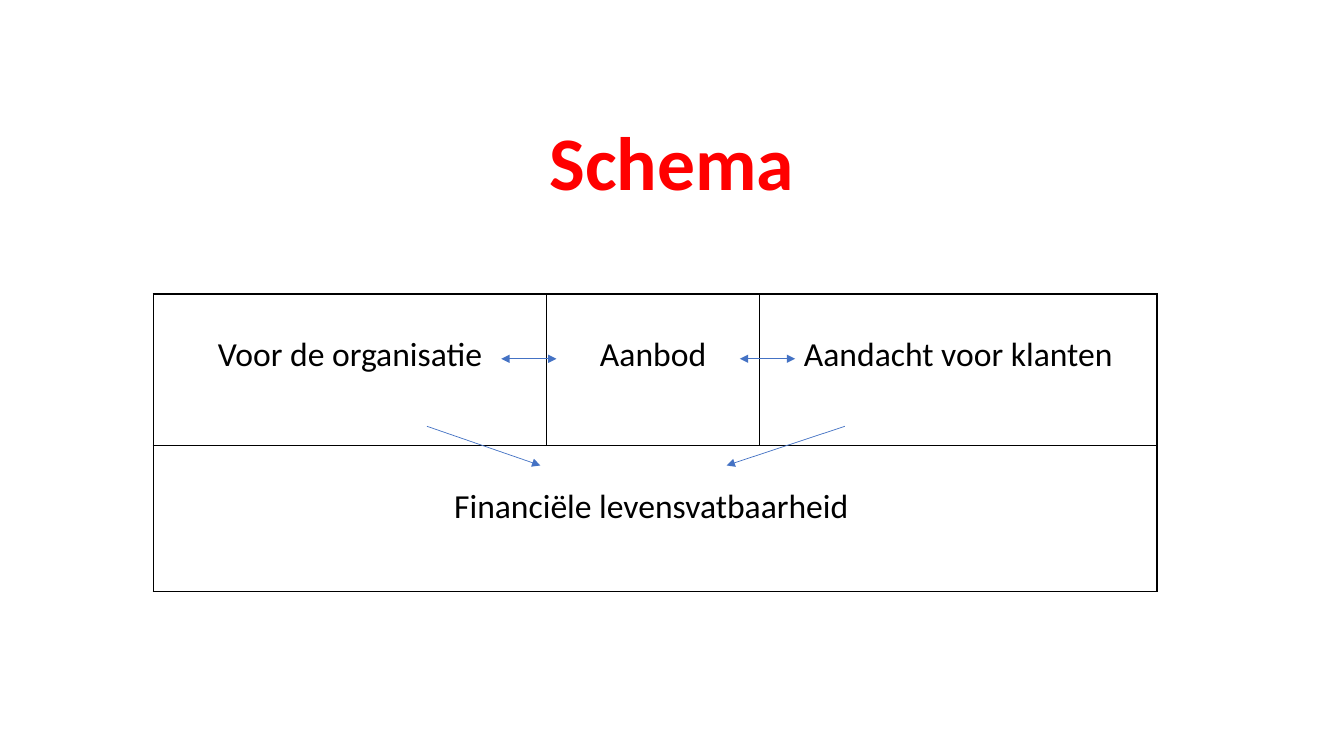
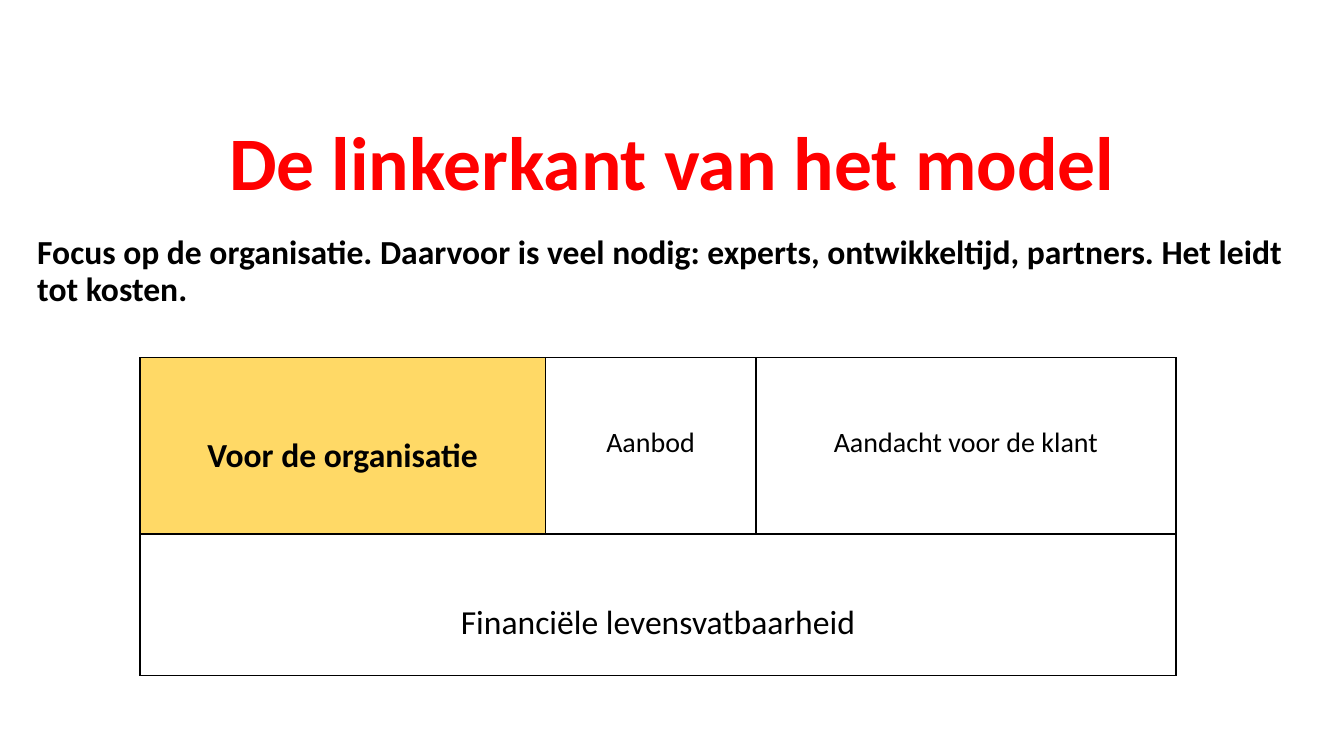
import dataclasses

import lxml.etree
import pptx
import pptx.dml.color
import pptx.enum.shapes
import pptx.enum.text
import pptx.oxml.ns
import pptx.util

Pt = pptx.util.Pt
qn = pptx.oxml.ns.qn
RGB = pptx.dml.color.RGBColor.from_string
ALIGN = pptx.enum.text.PP_ALIGN
ANCHOR = pptx.enum.text.MSO_ANCHOR


@dataclasses.dataclass(frozen=True)
class Theme:
    font: str = "Calibri"
    title_color: str = "FF0000"
    ink: str = "000000"
    highlight: str = "FFD966"
    arrow: str = "4472C4"
    title_size: float = 54
    text_size: float = 24
    small_size: float = 20
    border_width: float = 1
    arrow_width: float = 0.5
    line_spacing: float = 0.9


@dataclasses.dataclass(frozen=True)
class Box:
    left: float
    top: float
    width: float
    height: float

    def lengths(self):
        return [Pt(value) for value in dataclasses.astuple(self)]


@dataclasses.dataclass(frozen=True)
class Part:
    label: str
    inset_top: float
    size: float
    bold: bool = False
    fill: str = ""
    inset_right: float = 5


THEME = Theme()
SLIDE_WIDTH, SLIDE_HEIGHT = 960, 540
TITLE_BOX = Box(120, 88.5, 720, 62.5)


def apply(target, values):
    for name, value in values.items():
        setattr(target, name, value)


def write(frame, text, size, color, bold, align):
    paragraph = frame.paragraphs[0]
    paragraph.text = text
    paragraph.alignment = align
    apply(paragraph.font, {"name": THEME.font, "size": Pt(size), "bold": bold})
    paragraph.font.color.rgb = RGB(color)
    return paragraph


def add_text(slide, box, text, size, color, align, anchor):
    frame = slide.shapes.add_textbox(*box.lengths()).text_frame
    apply(frame, {"word_wrap": True, "vertical_anchor": anchor})
    paragraph = write(frame, text, size, color, True, align)
    paragraph.line_spacing = THEME.line_spacing


def add_title(slide, text):
    add_text(slide, TITLE_BOX, text, THEME.title_size, THEME.title_color,
             ALIGN.CENTER, ANCHOR.BOTTOM)


def add_borders(cell):
    properties = cell._tc.get_or_add_tcPr()
    for side in ("a:lnL", "a:lnR", "a:lnT", "a:lnB"):
        border = lxml.etree.SubElement(properties, qn(side), w=str(Pt(THEME.border_width)))
        fill = lxml.etree.SubElement(border, qn("a:solidFill"))
        lxml.etree.SubElement(fill, qn("a:srgbClr"), val=THEME.ink)


def fill_cell(cell, part):
    apply(cell, {
        "margin_left": Pt(5),
        "margin_right": Pt(part.inset_right),
        "margin_top": Pt(part.inset_top),
        "margin_bottom": 0,
        "vertical_anchor": ANCHOR.TOP,
    })
    write(cell.text_frame, part.label, part.size, THEME.ink, part.bold, ALIGN.CENTER)
    if part.fill:
        cell.fill.solid()
        cell.fill.fore_color.rgb = RGB(part.fill)


def add_model(slide, box, middle_left, middle_width, upper_height, upper_parts, base):
    model = slide.shapes.add_table(2, 3, *box.lengths()).table
    apply(model, {"first_row": False, "horz_banding": False})
    widths = (middle_left, middle_width, box.width - middle_left - middle_width)
    for column, width in zip(model.columns, widths):
        column.width = Pt(width)
    for row, height in zip(model.rows, (upper_height, box.height - upper_height)):
        row.height = Pt(height)
    for cell in model.iter_cells():
        add_borders(cell)
        cell.fill.background()
    model.cell(1, 0).merge(model.cell(1, 2))
    for index, part in enumerate(upper_parts):
        fill_cell(model.cell(0, index), part)
    fill_cell(model.cell(1, 0), base)


def add_arrow(slide, box, start, end, ends):
    points = [Pt(offset + origin) for point in (start, end)
              for offset, origin in zip(point, (box.left, box.top))]
    arrow = slide.shapes.add_connector(pptx.enum.shapes.MSO_CONNECTOR.STRAIGHT, *points)
    arrow.line.color.rgb = RGB(THEME.arrow)
    arrow.line.width = Pt(THEME.arrow_width)
    line = arrow.line._get_or_add_ln()
    for end_name in ends:
        lxml.etree.SubElement(line, qn(end_name), type="triangle")
    lxml.etree.SubElement(arrow._element.spPr, qn("a:effectLst"))


def add_model_arrows(slide, box):
    for start, end in ((195.5, 276.5), (494, 409.5)):
        add_arrow(slide, box, (start, 94.5), (end, 122.5), ["a:tailEnd"])
    for start in (248.5, 419):
        add_arrow(slide, box, (start, 46.3), (start + 39.5, 46.3),
                  ["a:headEnd", "a:tailEnd"])


def build_schema(slide):
    add_title(slide, "Schema")
    box = Box(109.5, 210, 717, 212.5)
    labels = ("Voor de organisatie", "Aanbod", "Aandacht voor klanten")
    upper_parts = [Part(label, 29.3, THEME.text_size) for label in labels]
    base = Part("Financiële levensvatbaarheid", 29.3, THEME.text_size, inset_right=10.5)
    add_model(slide, box, 281, 152, 108, upper_parts, base)
    add_model_arrows(slide, box)


def build_left_side(slide):
    add_title(slide, "De linkerkant van het model")
    add_text(slide, Box(19.5, 165, 921, 75),
             "Focus op de organisatie. Daarvoor is veel nodig: experts, ontwikkeltijd, "
             "partners. Het leidt tot kosten.",
             THEME.text_size, THEME.ink, ALIGN.LEFT, ANCHOR.TOP)
    upper_parts = [
        Part("Voor de organisatie", 56, THEME.text_size, True, THEME.highlight),
        Part("Aanbod", 49, THEME.small_size),
        Part("Aandacht voor de klant", 49, THEME.small_size),
    ]
    base = Part("Financiële levensvatbaarheid", 49, THEME.text_size)
    add_model(slide, Box(100, 255.5, 740, 227), 289.5, 150.5, 126, upper_parts, base)


def main():
    deck = pptx.Presentation()
    apply(deck, {"slide_width": Pt(SLIDE_WIDTH), "slide_height": Pt(SLIDE_HEIGHT)})
    for build in (build_schema, build_left_side):
        build(deck.slides.add_slide(deck.slide_layouts[6]))
    deck.save("out.pptx")


if __name__ == "__main__":
    main()
